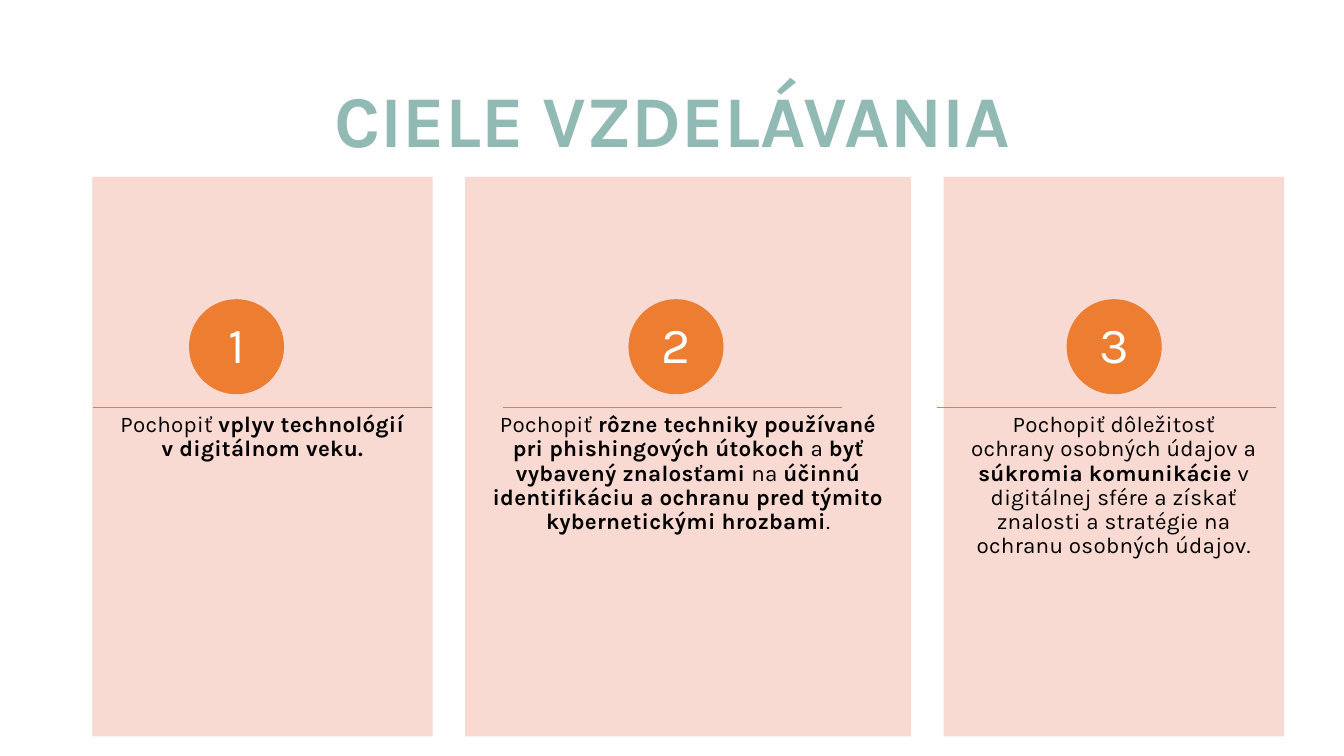
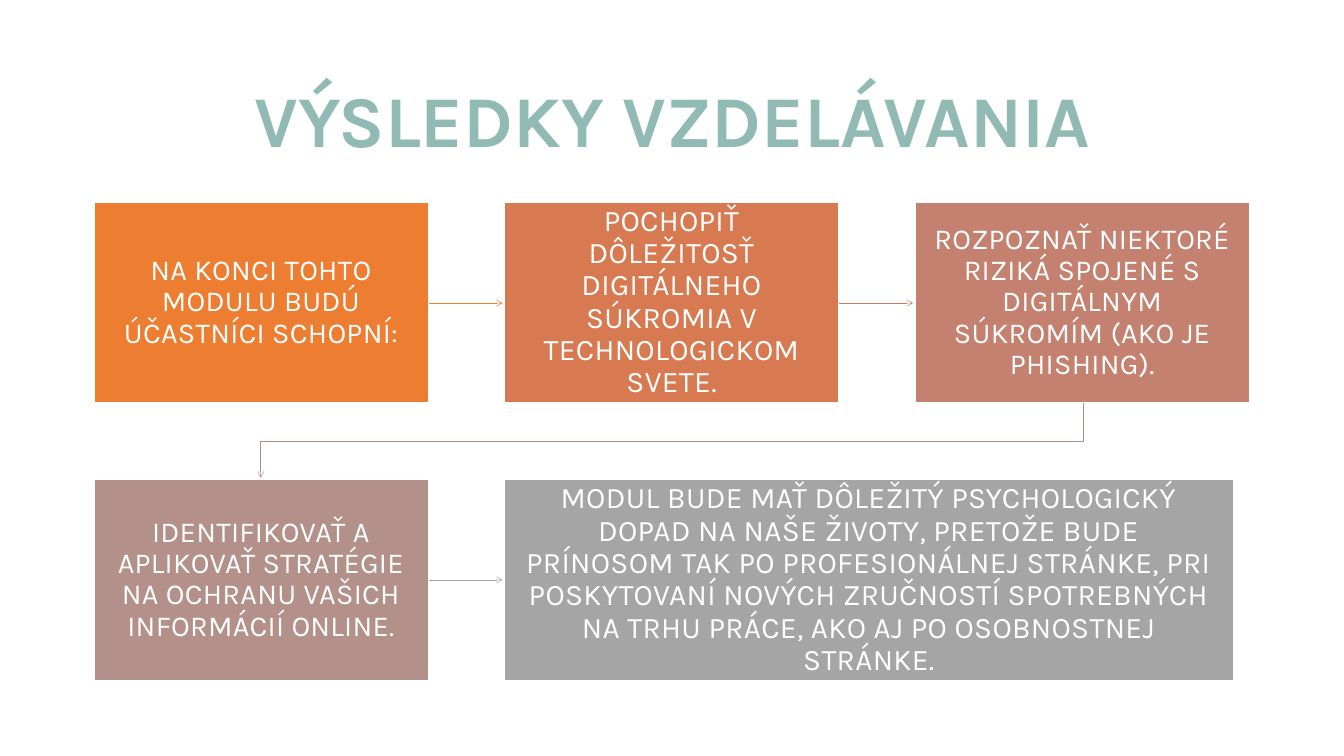
"""Build two slides on the aims and outcomes of a digital privacy module."""
from dataclasses import dataclass

from lxml import etree
from pptx import Presentation
from pptx import presentation as show
from pptx import util as u
from pptx.dml import color
from pptx.enum import shapes, text
from pptx.oxml import ns
from pptx.shapes.autoshape import Shape
from pptx.shapes.base import BaseShape
from pptx.slide import Slide

HUES = {
    "title": "92BAB5", "card": "F8D7CE", "ink": "000000", "white": "FFFFFF",
    "orange": "ED7D31", "copper": "D87A51", "rose": "C48170",
    "mauve": "B4908B", "grey": "A5A5A5", "clay": "D17B5C", "dust": "B98A82",
}
FONT = "Karla"
LEFT, TOP, GAP = 1.38, 2.64, 0.5
DISC = 1.4
COL, ROW, WIDE, HIGH = 6.11, 4.13, 4.97, 2.98
START, FIRST = 1.4, 3.01


@dataclass(frozen=True)
class Card:
    width: float
    disc: float
    rule: float
    words: tuple[str, ...]


@dataclass(frozen=True)
class Step:
    col: int
    row: int
    hue: str
    size: int
    words: str
    width: float = WIDE


@dataclass(frozen=True)
class Arrow:
    hue: str
    points: tuple[tuple[float, float], ...]


CARDS = (
    Card(5.05, 2.82, 1.38, ("Pochopiť ", "vplyv technológií v digitálnom veku.")),
    Card(6.62, 9.36, 7.48, (
        "Pochopiť ", "rôzne techniky používané pri phishingových útokoch",
        " a ", "byť vybavený znalosťami", " na ",
        "účinnú identifikáciu a ochranu pred týmito kybernetickými hrozbami", ".")),
    Card(5.05, 15.88, 13.94, (
        "Pochopiť dôležitosť ochrany osobných údajov a ", "súkromia komunikácie",
        " v digitálnej sfére a získať znalosti a stratégie na ochranu osobných údajov.")),
)
STEPS = (
    Step(0, 0, "orange", 31, "NA KONCI TOHTO MODULU BUDÚ ÚČASTNÍCI SCHOPNÍ:"),
    Step(1, 0, "copper", 32,
         "POCHOPIŤ DÔLEŽITOSŤ DIGITÁLNEHO SÚKROMIA V TECHNOLOGICKOM SVETE."),
    Step(2, 0, "rose", 31,
         "ROZPOZNAŤ NIEKTORÉ RIZIKÁ SPOJENÉ S DIGITÁLNYM SÚKROMÍM (AKO JE PHISHING)."),
    Step(0, 1, "mauve", 31,
         "IDENTIFIKOVAŤ A APLIKOVAŤ STRATÉGIE NA OCHRANU VAŠICH INFORMÁCIÍ ONLINE."),
    Step(1, 1, "grey", 32,
         "MODUL BUDE MAŤ DÔLEŽITÝ PSYCHOLOGICKÝ DOPAD NA NAŠE ŽIVOTY, PRETOŽE BUDE "
         "PRÍNOSOM TAK PO PROFESIONÁLNEJ STRÁNKE, PRI POSKYTOVANÍ NOVÝCH ZRUČNOSTÍ "
         "SPOTREBNÝCH NA TRHU PRÁCE, AKO AJ PO OSOBNOSTNEJ STRÁNKE.", 10.84),
)
ARROWS = (
    Arrow("orange", ((6.37, 4.51), (7.48, 4.51))),
    Arrow("clay", ((12.48, 4.51), (13.59, 4.51))),
    Arrow("dust", ((16.12, 6), (16.12, 6.57), (3.88, 6.57), (3.88, 7.11))),
    Arrow("grey", ((6.37, 8.63), (7.48, 8.63))),
)


def tint(hue: str) -> color.RGBColor:
    """Return a named colour."""
    return color.RGBColor.from_string(HUES[hue])


def write(shape: Shape, words: tuple[str, ...], size: int, hue: str,
          pads: tuple[float, float, float] = (0.1, 0.05, 0.05),
          anchor: text.MSO_ANCHOR = text.MSO_ANCHOR.MIDDLE,
          space: int = 0, bold: bool = False) -> None:
    """Write one centred paragraph, with every second piece bold."""
    frame = shape.text_frame
    frame.word_wrap = True
    frame.vertical_anchor = anchor
    side, top, base = map(u.Inches, pads)
    frame.margin_left = frame.margin_right = side
    frame.margin_top, frame.margin_bottom = top, base
    para = frame.paragraphs[0]
    para.alignment = text.PP_ALIGN.CENTER
    para.line_spacing = 0.9
    font = para.font
    font.name, font.size, font.bold = FONT, u.Pt(size), bold
    font.color.rgb = tint(hue)
    for props in shape.element.iter(ns.qn("a:defRPr")):
        props.set("spc", str(space))
    for spot, piece in enumerate(words):
        run = para.add_run()
        run.text = piece
        if spot % 2:
            run.font.bold = True


def block(slide: Slide, kind: shapes.MSO_SHAPE, place: tuple[float, ...],
          fill: str, line: str) -> Shape:
    """Draw a filled preset shape."""
    shape = slide.shapes.add_shape(kind, *map(u.Inches, place))
    shape.shadow.inherit = False
    shape.fill.solid()
    shape.fill.fore_color.rgb = tint(fill)
    shape.line.color.rgb = tint(line)
    shape.line.width = u.Pt(1)
    return shape


def fade(shape: Shape, share: int) -> None:
    """Set the opacity of fill and line in percent."""
    for tone in shape.element.spPr.iter(ns.qn("a:srgbClr")):
        etree.SubElement(tone, ns.qn("a:alpha")).set("val", str(share * 1000))


def stroke(slide: Slide, points: tuple[tuple[float, float], ...],
           hue: str, width: float) -> BaseShape:
    """Draw a straight line, or an open outline through more points."""
    spots = [(u.Inches(x), u.Inches(y)) for x, y in points]
    if len(spots) == 2:
        line = slide.shapes.add_connector(
            shapes.MSO_CONNECTOR.STRAIGHT, *spots[0], *spots[1])
    else:
        form = slide.shapes.build_freeform(*spots[0])
        form.add_line_segments(spots[1:], close=False)
        line = form.convert_to_shape()
        line.fill.background()
    line.line.color.rgb = tint(hue)
    line.line.width = u.Pt(width)
    etree.SubElement(line.element.spPr, ns.qn("a:effectLst"))
    return line


def point(slide: Slide, arrow: Arrow) -> None:
    """Draw a line that ends in an open arrowhead."""
    line = stroke(slide, arrow.points, arrow.hue, 0.5)
    edge = line.element.spPr.find(ns.qn("a:ln"))
    etree.SubElement(edge, ns.qn("a:tailEnd")).set("type", "arrow")


def start(deck: show.Presentation, title: str) -> Slide:
    """Add a blank slide with the shared title style."""
    slide = deck.slides.add_slide(deck.slide_layouts[6])
    box = slide.shapes.add_textbox(*map(u.Inches, (LEFT, 0.91, 17.25, 1.86)))
    write(box, (title,), 78, "title", bold=True)
    return slide


def draw_card(slide: Slide, card: Card, left: float, rank: int) -> None:
    """Draw one numbered aim."""
    panel = block(slide, shapes.MSO_SHAPE.RECTANGLE,
                  (left, TOP, card.width, 8.31), "card", "card")
    fade(panel, 90)
    write(panel, card.words, 24, "ink", (0.39, 3.51, 0.36),
          text.MSO_ANCHOR.TOP, 30)
    disc = block(slide, shapes.MSO_SHAPE.OVAL,
                 (card.disc, 4.46, DISC, DISC), "orange", "orange")
    write(disc, (str(rank),), 54, "white", (0, 0, 0))
    stroke(slide, ((card.rule, 6.06), (card.rule + 5.05, 6.06)), "orange", 1)


def draw_step(slide: Slide, step: Step) -> None:
    """Draw one box of the flow."""
    place = (START + step.col * COL, FIRST + step.row * ROW, step.width, HIGH)
    box = block(slide, shapes.MSO_SHAPE.RECTANGLE, place, step.hue, "white")
    write(box, (step.words,), step.size, "white", (0.24, 0.26, 0.26), space=30)


def main() -> None:
    """Build and save the deck."""
    deck = Presentation()
    deck.slide_width, deck.slide_height = u.Inches(20), u.Inches(11.25)

    aims = start(deck, "CIELE VZDELÁVANIA")
    left = LEFT
    for rank, card in enumerate(CARDS, 1):
        draw_card(aims, card, left, rank)
        left += card.width + GAP

    gains = start(deck, "VÝSLEDKY VZDELÁVANIA")
    for arrow in ARROWS:
        point(gains, arrow)
    for step in STEPS:
        draw_step(gains, step)

    deck.save("out.pptx")


if __name__ == "__main__":
    main()
